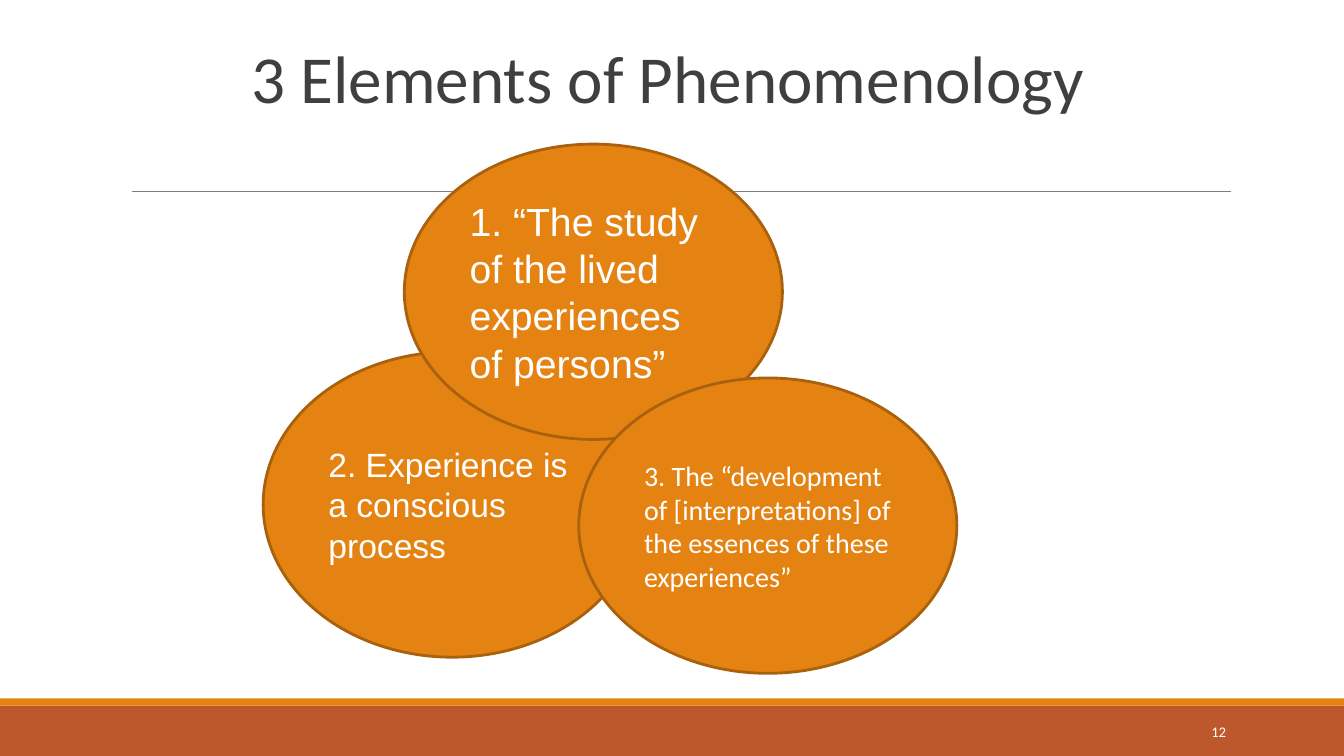
from dataclasses import dataclass

from lxml.etree import SubElement
from pptx import Presentation
from pptx.dml.color import RGBColor
from pptx.enum.shapes import MSO_CONNECTOR, MSO_SHAPE
from pptx.enum.text import MSO_ANCHOR, MSO_AUTO_SIZE, PP_ALIGN
from pptx.oxml.ns import qn
from pptx.shapes.autoshape import Shape
from pptx.slide import Slide
from pptx.util import Emu, Pt

COLOURS = {
    "orange": "E48312",
    "outline": "A9610D",
    "rust": "BD582C",
    "rule": "7F7F7F",
    "title": "3F3F3F",
    "white": "FFFFFF",
}
SLIDE_WIDTH, SLIDE_HEIGHT = 1333, 750


@dataclass
class Band:
    top: int
    height: int
    colour: str


@dataclass
class Element:
    text: str
    left: int
    top: int
    height: int
    font_name: str
    font_size: int


BANDS = [Band(700, 50, "rust"), Band(693, 7, "orange")]
ELEMENT_WIDTH = 375
ELEMENTS = [
    Element("2. Experience is a conscious process", 261, 349, 303, "Arial", 24),
    Element("1. “The study of the lived experiences of persons”",
            401, 143, 293, "Arial", 28),
    Element("3. The “development of [interpretations] of the essences of these "
            "experiences”", 574, 375, 293, "Calibri", 20),
]


def px(length: int) -> Emu:
    """Convert px, at 100 to the inch, into EMU."""
    return Emu(length * 9144)


def colour(name: str) -> RGBColor:
    return RGBColor.from_string(COLOURS[name])


def write(shape: Shape, text: str, font_name: str, size: float, text_colour: str,
          alignment: PP_ALIGN, anchor: MSO_ANCHOR) -> None:
    frame = shape.text_frame
    frame.word_wrap = True
    frame.auto_size = MSO_AUTO_SIZE.NONE
    frame.vertical_anchor = anchor
    frame.text = text
    paragraph = frame.paragraphs[0]
    paragraph.alignment = alignment
    paragraph.font.name = font_name
    paragraph.font.size = Pt(size)
    paragraph.font.color.rgb = colour(text_colour)


def add_filled(slide: Slide, kind: MSO_SHAPE, left: int, top: int, width: int,
               height: int, fill: str) -> Shape:
    shape = slide.shapes.add_shape(kind, px(left), px(top), px(width), px(height))
    shape.shadow.inherit = False
    shape.fill.solid()
    shape.fill.fore_color.rgb = colour(fill)
    shape.line.fill.background()
    return shape


def add_rule(slide: Slide, left: int, right: int, top: int) -> None:
    rule = slide.shapes.add_connector(
        MSO_CONNECTOR.STRAIGHT, px(left), px(top), px(right), px(top))
    rule.line.color.rgb = colour("rule")
    rule.line.width = Pt(0.75)
    SubElement(rule._element.spPr, qn("a:effectLst"))


def add_title(slide: Slide) -> None:
    title = slide.shapes.title
    title.left, title.top, title.width, title.height = (
        px(120), px(31), px(1100), px(159))
    write(title, "3 Elements of Phenomenology", "Calibri", 48, "title",
          PP_ALIGN.CENTER, MSO_ANCHOR.BOTTOM)
    title.text_frame.margin_right = px(25)
    title.text_frame.margin_bottom = px(74)
    title.text_frame.paragraphs[0].line_spacing = 0.85


def add_element(slide: Slide, element: Element) -> None:
    ellipse = add_filled(slide, MSO_SHAPE.OVAL, element.left, element.top,
                         ELEMENT_WIDTH, element.height, "orange")
    ellipse.line.color.rgb = colour("outline")
    ellipse.line.width = Pt(2)
    write(ellipse, element.text, element.font_name, element.font_size, "white",
          PP_ALIGN.LEFT, MSO_ANCHOR.MIDDLE)


def main() -> None:
    presentation = Presentation()
    presentation.slide_width = px(SLIDE_WIDTH)
    presentation.slide_height = px(SLIDE_HEIGHT)
    slide = presentation.slides.add_slide(
        presentation.slide_layouts.get_by_name("Title Only"))

    # Footer bands, rule and title
    for band in BANDS:
        add_filled(slide, MSO_SHAPE.RECTANGLE, 0, band.top, SLIDE_WIDTH,
                   band.height, band.colour)
    add_rule(slide, 131, 1221, 190)
    add_title(slide)

    # Slide number
    number = slide.shapes.add_textbox(px(1083), px(706), px(143), px(40))
    write(number, "12", "Calibri", 10.5, "white", PP_ALIGN.RIGHT, MSO_ANCHOR.MIDDLE)

    # Overlapping elements, from back to front
    for element in ELEMENTS:
        add_element(slide, element)

    presentation.save("out.pptx")


if __name__ == "__main__":
    main()
